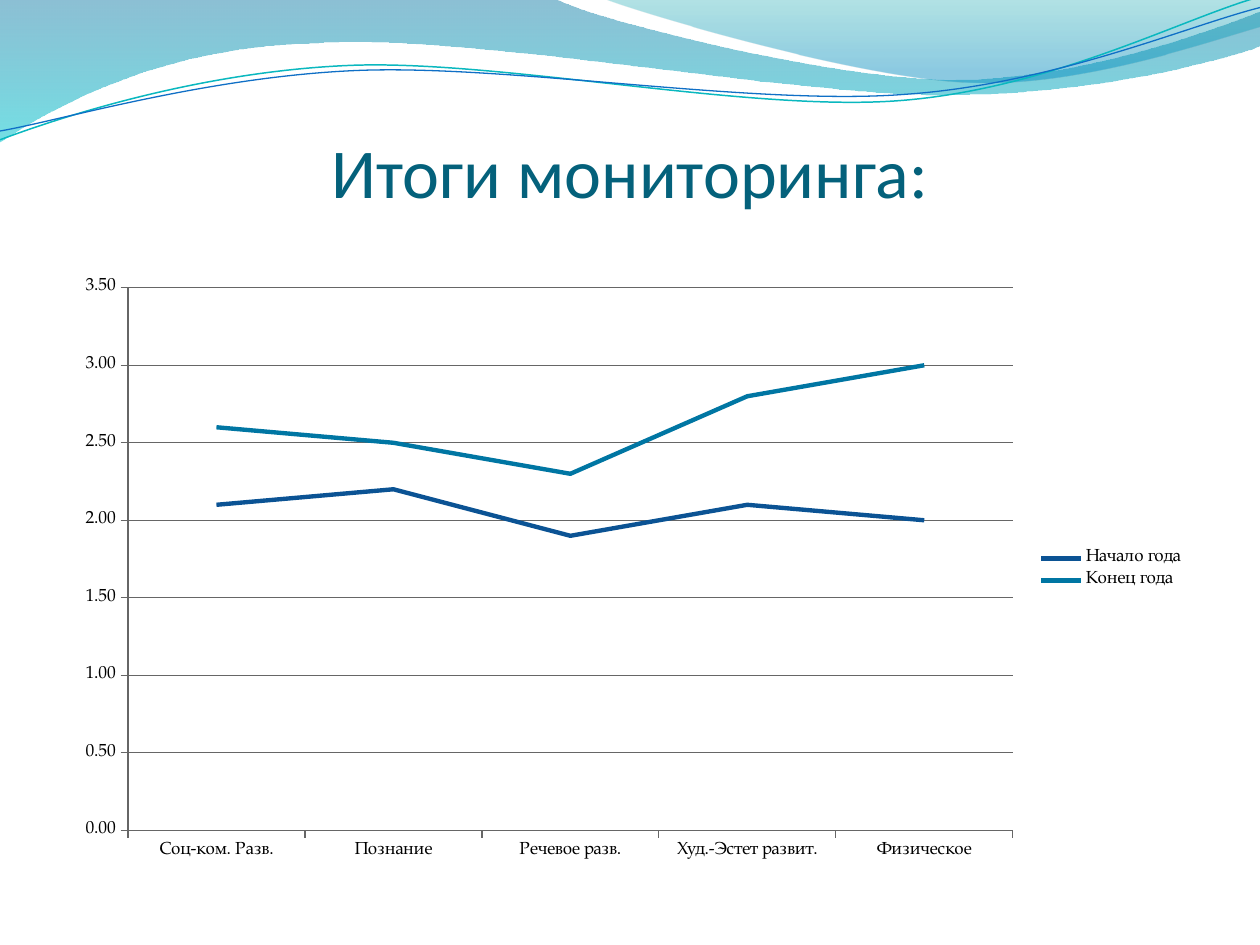
from dataclasses import dataclass

from lxml import etree
from pptx import Presentation
from pptx.chart.data import CategoryChartData
from pptx.dml.color import RGBColor
from pptx.enum.chart import XL_CHART_TYPE, XL_LEGEND_POSITION, XL_MARKER_STYLE, XL_TICK_MARK
from pptx.enum.text import MSO_ANCHOR, PP_ALIGN
from pptx.oxml.ns import qn
from pptx.util import Inches, Pt


@dataclass(frozen=True)
class Theme:
    title_font: str = "Calibri"
    title_size: int = 40
    title_color: str = "04617B"
    chart_font: str = "TeX Gyre Pagella"
    chart_size: int = 10
    chart_text: str = "000000"
    axis: str = "666666"
    series: tuple = ("0B5394", "0076A3")
    # Gradient stops: position in percent, colour, opacity in percent
    wide_band: tuple = ((0, "0074A1", 45), (100, "00C6CF", 55))
    right_band: tuple = ((0, "00A1A9", 30), (80, "008BBF", 45))
    teal_line: str = "0AB8BF"
    blue_line: str = "0F6FC6"


THEME = Theme()

# Outlines in inches from the region's corner: a pair is a straight
# step, six numbers are a Bezier curve
WIDE_BAND = [
    (0, 0), (4.4, -0.01), (4.76, 0.17, 6.64, 0.63, 7.58, 0.63),
    (8.53, 0.63, 9.58, 0.26, 10, 0.09), (10.01, 0.36),
    (9.83, 0.44, 8.7, 0.76, 7.46, 0.75), (6.22, 0.75, 3.82, 0.28, 2.57, 0.34),
    (1.29, 0.36, 0.46, 0.83, -0.01, 1.13),
]
RIGHT_BAND = [
    (4.79, -0.01), (5.09, 0.11, 6.82, 0.62, 7.69, 0.65),
    (8.56, 0.69, 9.61, 0.32, 10, 0.21), (10, 0),
]
TEAL_LINE = [
    (0, 1.11), (0.48, 0.93, 1.58, 0.57, 2.77, 0.52),
    (3.95, 0.47, 5.93, 0.89, 7.13, 0.8), (8.33, 0.71, 9.38, 0.15, 9.98, -0.02),
]
BLUE_LINE = [
    (0, 1.04), (0.47, 0.96, 1.64, 0.61, 2.83, 0.56),
    (4.03, 0.51, 5.97, 0.84, 7.17, 0.75), (8.36, 0.67, 9.41, 0.21, 10, 0.06),
]


def rgb(value):
    return RGBColor.from_string(value)


def add_outline(slide, left, top, outline, close):
    points = [(left + Inches(x), top + Inches(y))
              for step in outline for x, y in zip(step[::2], step[1::2])]
    builder = slide.shapes.build_freeform(*points[0], scale=1.0)
    builder.add_line_segments(points[1:], close=close)
    s = builder.convert_to_shape()
    s.shadow.inherit = False

    # Join the three points of each curve into one Bezier segment
    segments = iter(list(s.element.spPr.iter(qn("a:lnTo"))))
    for step in outline[1:]:
        first = next(segments)
        if len(step) == 6:
            curve = etree.Element(qn("a:cubicBezTo"))
            first.addprevious(curve)
            for segment in (first, next(segments), next(segments)):
                curve.append(segment[0])
                segment.getparent().remove(segment)
    return s


def add_waves(slide, left, top):
    # Translucent bands, shaded from top to bottom
    for outline, stops in ((WIDE_BAND, THEME.wide_band), (RIGHT_BAND, THEME.right_band)):
        s = add_outline(slide, left, top, outline, close=True)
        s.line.fill.background()
        s.fill.gradient()
        s.fill.gradient_angle = 270
        for stop, (position, color, opacity) in zip(s.fill.gradient_stops, stops):
            stop.position = position / 100
            stop.color.rgb = rgb(color)
        clrs = s.element.spPr.iter(qn("a:srgbClr"))
        for clr, (position, color, opacity) in zip(clrs, stops):
            etree.SubElement(clr, qn("a:alpha"), val=str(opacity * 1000))

    # Thin lines
    for outline, color, width in ((TEAL_LINE, THEME.teal_line, 0.85),
                                  (BLUE_LINE, THEME.blue_line, 0.75)):
        s = add_outline(slide, left, top, outline, close=False)
        s.fill.background()
        s.line.color.rgb = rgb(color)
        s.line.width = Pt(width)


def add_title(slide, left, top, width, height, text):
    tf = slide.shapes.add_textbox(left, top, width, height).text_frame
    tf.word_wrap = True
    tf.vertical_anchor = MSO_ANCHOR.BOTTOM
    tf.margin_left = tf.margin_right = tf.margin_bottom = 0
    tf.margin_top = Inches(0.05)
    p = tf.paragraphs[0]
    p.alignment = PP_ALIGN.CENTER
    r = p.add_run()
    r.text = text
    r.font.name = THEME.title_font
    r.font.size = Pt(THEME.title_size)
    r.font.color.rgb = rgb(THEME.title_color)


def add_results_chart(slide, left, top, width, height):
    data = CategoryChartData(number_format="0.00")
    data.categories = ["Соц-ком. Разв.", "Познание", "Речевое разв.",
                       "Худ.-Эстет развит.", "Физическое"]
    data.add_series("Начало года", (2.1, 2.2, 1.9, 2.1, 2))
    data.add_series("Конец года", (2.6, 2.5, 2.3, 2.8, 3))
    chart = slide.shapes.add_chart(XL_CHART_TYPE.LINE, left, top, width, height, data).chart
    chart.has_title = False
    chart.font.name = THEME.chart_font
    chart.font.size = Pt(THEME.chart_size)
    chart.font.color.rgb = rgb(THEME.chart_text)
    chart.has_legend = True
    chart.legend.position = XL_LEGEND_POSITION.RIGHT
    chart.legend.include_in_layout = False

    # Axes
    for axis in (chart.category_axis, chart.value_axis):
        axis.major_tick_mark = XL_TICK_MARK.OUTSIDE
        axis.minor_tick_mark = XL_TICK_MARK.NONE
        axis.format.line.color.rgb = rgb(THEME.axis)
        axis.format.line.width = Pt(0.75)
    values = chart.value_axis
    values.minimum_scale, values.maximum_scale, values.major_unit = 0, 3.5, 0.5
    values.tick_labels.number_format = "0.00"
    values.tick_labels.number_format_is_linked = False
    values.has_major_gridlines = True
    grid = values.major_gridlines.format.line
    grid.color.rgb = rgb(THEME.axis)
    grid.width = Pt(0.75)

    # Series
    plot = chart.plots[0]
    plot.vary_by_categories = False
    for series, color in zip(plot.series, THEME.series):
        series.smooth = False
        series.marker.style = XL_MARKER_STYLE.NONE
        series.format.line.color.rgb = rgb(color)
        series.format.line.width = Pt(2.5)


def main():
    prs = Presentation()
    prs.slide_width, prs.slide_height = Inches(10), Inches(7.5)
    slide = prs.slides.add_slide(prs.slide_layouts[6])
    add_waves(slide, Inches(0), Inches(0))
    add_title(slide, Inches(0.5), Inches(0.44), Inches(9), Inches(1.25), "Итоги мониторинга:")
    add_results_chart(slide, Inches(0.5), Inches(2.12), Inches(9), Inches(4.8))
    prs.save("out.pptx")


if __name__ == "__main__":
    main()
